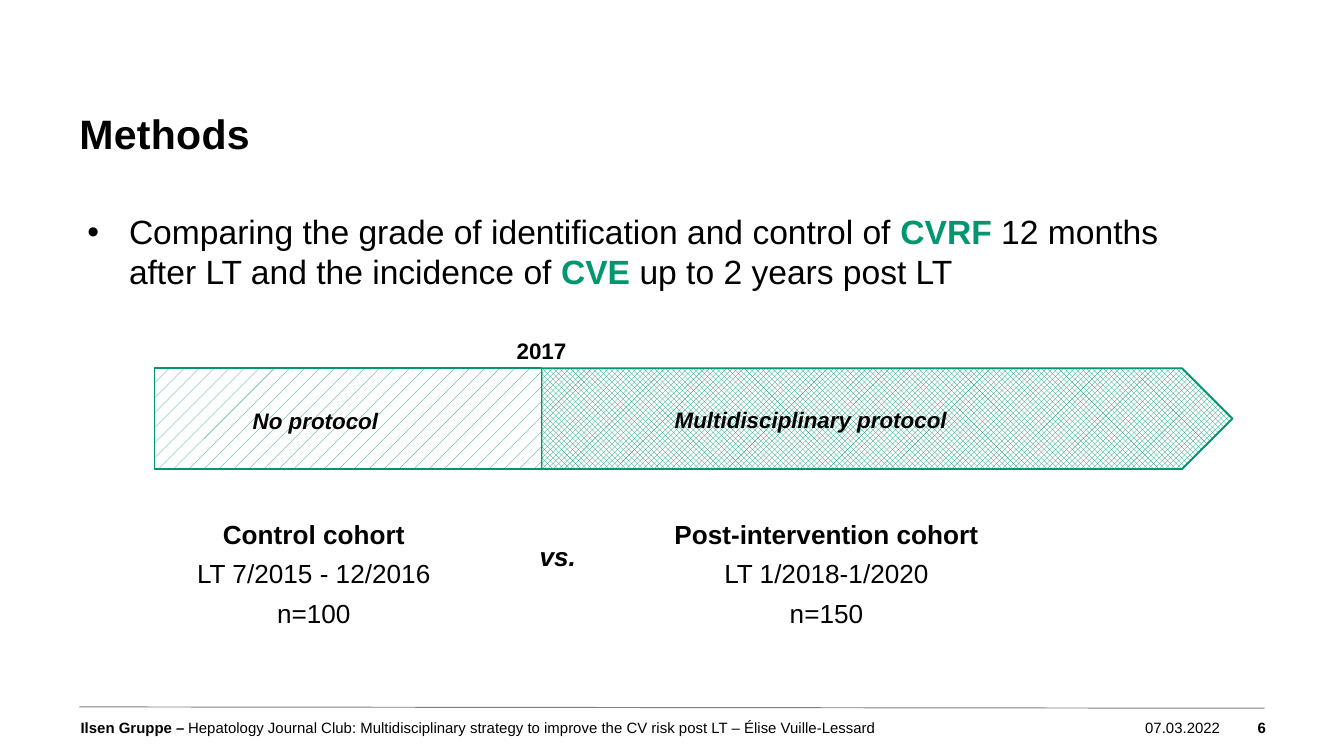
from dataclasses import dataclass

from lxml.etree import SubElement
from pptx import Presentation
from pptx.dml.color import RGBColor
from pptx.enum.dml import MSO_PATTERN as Pattern
from pptx.enum.shapes import MSO_CONNECTOR as Line, MSO_SHAPE as Shape
from pptx.enum.text import MSO_ANCHOR as Anchor, MSO_AUTO_SIZE as Fit, PP_ALIGN as Align
from pptx.oxml.ns import qn
from pptx.util import Inches, Pt

BLACK = RGBColor(0x00, 0x00, 0x00)
WHITE = RGBColor(0xFF, 0xFF, 0xFF)
GREEN = RGBColor(0x00, 0x96, 0x70)
GRAY = RGBColor(0x80, 0x80, 0x80)
FONT = "Arial"


@dataclass
class Label:
    text: str
    left: float
    top: float
    width: float
    height: float
    size: float
    bold: bool = False
    italic: bool = False
    align: Align = Align.LEFT
    pitch: float | None = None  # line spacing in points
    head: bool = False  # only the first line is bold


@dataclass
class Phase:
    kind: Shape
    left: float
    width: float
    pattern: Pattern


PHASES = [
    Phase(Shape.PENTAGON, 4.03, 5.14, Pattern.TRELLIS),
    Phase(Shape.RECTANGLE, 1.15, 2.88, Pattern.PERCENT_10),
]
LABELS = [
    Label("2017", 3.73, 2.42, 0.6, 0.34, 12, bold=True, align=Align.CENTER, pitch=21),
    Label("No protocol", 1.88, 3.03, 1.05, 0.2, 12, bold=True, italic=True),
    Label("Multidisciplinary protocol", 5.02, 3.02, 2.15, 0.2, 12, bold=True, italic=True),
    Label("Control cohort\vLT 7/2015 - 12/2016\vn=100", 1.04, 3.8, 2.59, 0.93, 14,
          align=Align.CENTER, pitch=21, head=True),
    Label("vs.", 3.85, 3.96, 0.6, 0.34, 14, bold=True, italic=True,
          align=Align.CENTER, pitch=21),
    Label("Post-intervention cohort\vLT 1/2018-1/2020\vn=150", 5, 3.8, 2.3, 0.89, 14,
          align=Align.CENTER, pitch=21, head=True),
    Label("Ilsen Gruppe –", 0.6, 5.35, 0.8, 0.13, 8, bold=True),
    Label("Hepatology Journal Club: Multidisciplinary strategy to improve the CV risk "
          "post LT – Élise Vuille-Lessard", 1.4, 5.35, 6.1, 0.11, 8),
    Label("07.03.2022", 8.18, 5.35, 0.9, 0.11, 8, align=Align.RIGHT),
    Label("6", 9.08, 5.35, 0.34, 0.11, 8, bold=True, align=Align.RIGHT),
]
TITLE = Label("Methods", 0.59, 0.8, 8.82, 0.45, 22, bold=True, pitch=27)
BODY = Label("", 0.65, 1.58, 8.43, 0.85, 18, pitch=21)
AIM = [
    ("Comparing the grade of identification and control of ", False),
    ("CVRF", True),
    (" 12 months after LT and the incidence of ", False),
    ("CVE", True),
    (" up to 2 years post LT", False),
]


def write(box, label: Label) -> None:
    """Place a text shape and give it the label's words and style."""
    box.left, box.top = Inches(label.left), Inches(label.top)
    box.width, box.height = Inches(label.width), Inches(label.height)
    frame = box.text_frame
    frame.margin_left = frame.margin_right = frame.margin_top = frame.margin_bottom = 0
    frame.word_wrap = True
    frame.auto_size = Fit.NONE
    frame.vertical_anchor = Anchor.TOP
    para = frame.paragraphs[0]
    para.text = label.text
    para.alignment = label.align
    para.space_before = Pt(0)
    if label.pitch:
        para.line_spacing = Pt(label.pitch)
    font = para.font
    font.name, font.size = FONT, Pt(label.size)
    font.bold, font.italic = label.bold, label.italic
    font.color.rgb = BLACK
    if label.head:
        para.runs[0].font.bold = True


def add_title(box) -> None:
    """Fill the title with slightly spaced letters."""
    write(box, TITLE)
    run = box.text_frame.paragraphs[0].runs[0]
    run._r.get_or_add_rPr().set("spc", "20")


def add_aim(box) -> None:
    """Fill the body with one bullet whose key terms stand out."""
    para = box.text_frame.paragraphs[0]
    props = para._p.get_or_add_pPr()
    props.set("marL", str(Inches(0.31)))
    props.set("indent", str(Inches(-0.31)))
    bullet = SubElement(props, qn("a:buChar"))
    bullet.set("char", "•")
    write(box, BODY)
    for text, key in AIM:
        run = para.add_run()
        run.text = text
        if key:
            run.font.bold = True
            run.font.color.rgb = GREEN


def add_phase(slide, phase: Phase) -> None:
    bar = slide.shapes.add_shape(phase.kind, Inches(phase.left), Inches(2.74),
                                 Inches(phase.width), Inches(0.75))
    bar.shadow.inherit = False
    bar.fill.patterned()
    bar.fill.pattern = phase.pattern
    bar.fill.fore_color.rgb = GREEN
    bar.fill.back_color.rgb = WHITE
    bar.line.color.rgb = GREEN
    bar.line.width = Pt(1)


def add_rule(slide) -> None:
    rule = slide.shapes.add_connector(Line.STRAIGHT, Inches(0.59), Inches(5.26),
                                      Inches(9.41), Inches(5.27))
    rule.line.color.rgb = GRAY
    rule.line.width = Pt(0.5)
    SubElement(rule._element.spPr, qn("a:effectLst"))


def main() -> None:
    deck = Presentation()
    deck.slide_width = Inches(10)
    deck.slide_height = deck.slide_width * 9 // 16
    slide = deck.slides.add_slide(deck.slide_layouts[1])
    add_title(slide.shapes.title)
    add_aim(slide.placeholders[1])
    add_rule(slide)
    for phase in PHASES:
        add_phase(slide, phase)
    for label in LABELS:
        write(slide.shapes.add_textbox(0, 0, 0, 0), label)
    deck.save("out.pptx")


if __name__ == "__main__":
    main()
